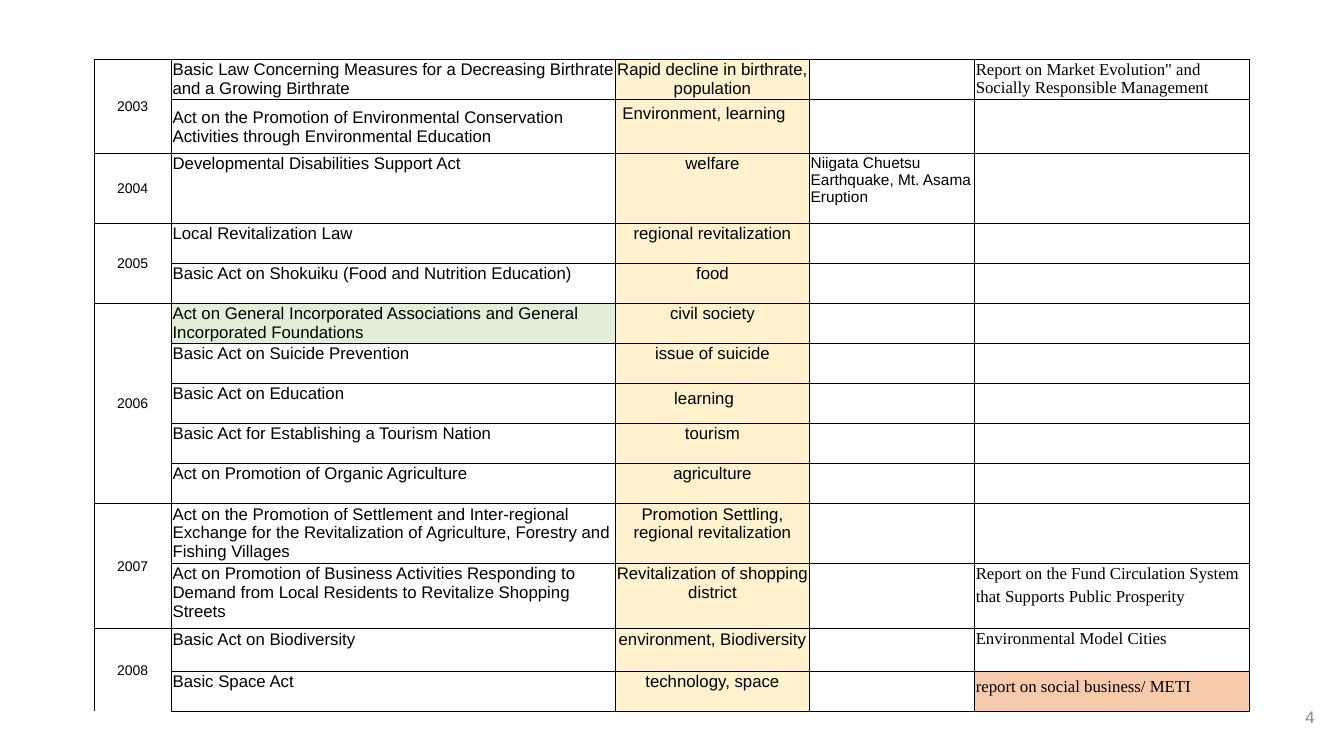
"""Build a slide with a table of Japanese social legislation, 2003 to 2008."""
from lxml import etree
from pptx import Presentation
from pptx.dml.color import RGBColor
from pptx.enum.text import MSO_ANCHOR, PP_ALIGN
from pptx.oxml.ns import qn
from pptx.util import Cm, Pt

MIDDLE, TOP = MSO_ANCHOR.MIDDLE, MSO_ANCHOR.TOP
LEFT, CENTER, RIGHT = PP_ALIGN.LEFT, PP_ALIGN.CENTER, PP_ALIGN.RIGHT

COLORS = {"ink": "000000", "theme": "FFF2CC", "civil": "E1EFD8",
          "business": "F7CAAC", "number": "888888"}

# year: (row height in cm, act, theme, event, report)
YEARS = {
    "2003": [
        (1.01, "Basic Law Concerning Measures for a Decreasing Birthrate and a Growing Birthrate",
         "Rapid decline in birthrate, population", "",
         "Report on Market Evolution\" and Socially Responsible Management"),
        (1.36, "Act on the Promotion of Environmental Conservation Activities through Environmental Education",
         "Environment, learning　", "", ""),
    ],
    "2004": [
        (1.76, "Developmental Disabilities Support Act", "welfare",
         "Niigata Chuetsu Earthquake, Mt. Asama Eruption", ""),
    ],
    "2005": [
        (1.01, "Local Revitalization Law", "regional revitalization", "", ""),
        (1.01, "Basic Act on Shokuiku (Food and Nutrition Education)", "food", "", ""),
    ],
    "2006": [
        (1.01, "Act on General Incorporated Associations and General Incorporated Foundations",
         "civil society", "", ""),
        (1.01, "Basic Act on Suicide Prevention", "issue of suicide", "", ""),
        (1.01, "Basic Act on Education", "learning　", "", ""),
        (1.01, "Basic Act for Establishing a Tourism Nation", "tourism", "", ""),
        (1.01, "Act on Promotion of Organic Agriculture", "agriculture", "", ""),
    ],
    "2007": [
        (1.51, "Act on the Promotion of Settlement and Inter-regional Exchange for the "
         "Revitalization of Agriculture, Forestry and Fishing Villages",
         "Promotion Settling, regional revitalization", "", ""),
        (1.64, "Act on Promotion of Business Activities Responding to Demand from Local "
         "Residents to Revitalize Shopping Streets",
         "Revitalization of shopping district", "",
         "Report on the Fund Circulation System that Supports Public Prosperity　"),
    ],
    "2008": [
        (1.08, "Basic Act on Biodiversity", "environment, Biodiversity", "",
         "Environmental Model Cities"),
        (1.01, "Basic Space Act", "technology, space", "", "report on social business/ METI　"),
    ],
}

# column: width in cm, font, size, alignment
COLUMNS = [
    (1.95, "Arial", 10, CENTER),
    (11.19, "Arial", 12, LEFT),
    (4.89, "Arial", 12, CENTER),
    (4.16, "Arial", 11, LEFT),
    (6.93, "Times New Roman", 12, LEFT),
]
YEAR, ACT, THEME, EVENT, REPORT = range(len(COLUMNS))
FILLS = {(5, ACT): "civil", (13, REPORT): "business"}
MIDDLE_CELLS = {(1, ACT)}


def style_paragraph(p, text, font, size, color, align):
    p.text = text
    p.alignment = align
    p.font.name, p.font.size = font, Pt(size)
    p.font.color.rgb = RGBColor.from_string(COLORS[color])


def fill_cell(cell, text, column, fill=None, anchor=TOP):
    cell.margin_left = cell.margin_right = cell.margin_top = Cm(0.03)
    cell.margin_bottom = 0
    cell.vertical_anchor = anchor
    _, font, size, align = COLUMNS[column]
    style_paragraph(cell.text_frame.paragraphs[0], text, font, size, "ink", align)
    if fill:
        cell.fill.solid()
        cell.fill.fore_color.rgb = RGBColor.from_string(COLORS[fill])
    else:
        cell.fill.background()


def add_borders(cell, sides):
    tc_pr = cell._tc.get_or_add_tcPr()
    for i, side in enumerate(sides):
        ln = etree.Element(qn("a:ln" + side), w=str(Pt(0.75)))
        solid = etree.SubElement(ln, qn("a:solidFill"))
        etree.SubElement(solid, qn("a:srgbClr"), val=COLORS["ink"])
        tc_pr.insert(i, ln)


def add_law_table(s):
    rows = [(year, *row) for year, group in YEARS.items() for row in group]
    width = sum(column[0] for column in COLUMNS)
    height = sum(row[1] for row in rows)
    table = s.shapes.add_table(len(rows), len(COLUMNS), Cm(2.37), Cm(1.49),
                               Cm(width), Cm(height)).table
    table.first_row = table.horz_banding = False
    for c, column in enumerate(COLUMNS):
        table.columns[c].width = Cm(column[0])

    for r, (_, row_height, *texts) in enumerate(rows):
        table.rows[r].height = Cm(row_height)
        for c, text in enumerate(texts, start=ACT):
            fill = "theme" if c == THEME else FILLS.get((r, c))
            anchor = MIDDLE if (r, c) in MIDDLE_CELLS else TOP
            fill_cell(table.cell(r, c), text, c, fill, anchor)
            add_borders(table.cell(r, c), "LRTB")

    first = 0
    for year, group in YEARS.items():
        last = first + len(group) - 1
        if last > first:
            table.cell(first, YEAR).merge(table.cell(last, YEAR))
        for r in range(first, last + 1):
            cell = table.cell(r, YEAR)
            fill_cell(cell, year if r == first else "", YEAR, anchor=MIDDLE)
            closed = "LRTB" if last < len(rows) - 1 else "LRT"
            add_borders(cell, closed if r == first else "LR")
        first = last + 1


def add_page_number(s, number):
    tf = s.shapes.add_textbox(Cm(25.76), Cm(17.55), Cm(7.62), Cm(1.01)).text_frame
    tf.word_wrap = True
    tf.vertical_anchor = MIDDLE
    style_paragraph(tf.paragraphs[0], number, "Arial", 12, "number", RIGHT)


def main():
    prs = Presentation()
    prs.slide_width, prs.slide_height = Cm(33.87), Cm(19.05)
    s = prs.slides.add_slide(prs.slide_layouts[6])
    add_law_table(s)
    add_page_number(s, "4")
    prs.save("out.pptx")


if __name__ == "__main__":
    main()
